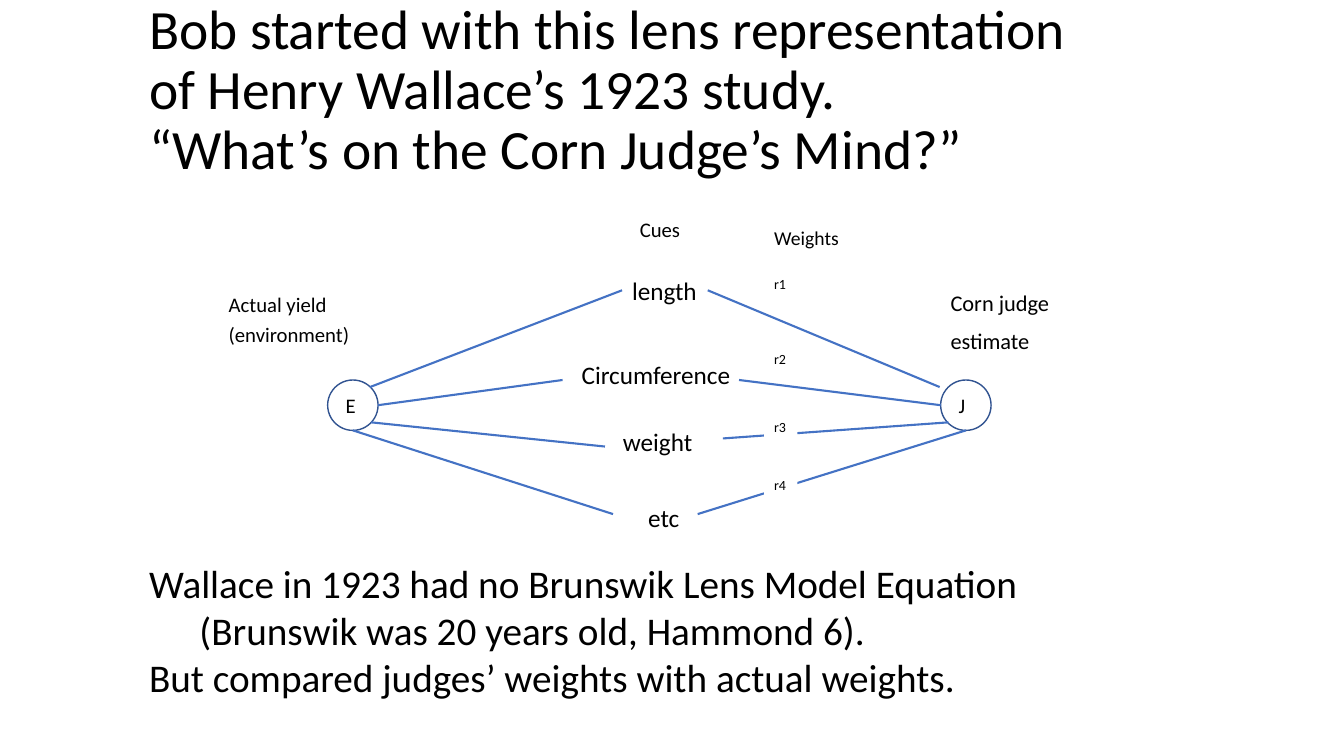
from pptx import Presentation, util as u
from pptx.dml.color import RGBColor
from pptx.enum import shapes, text
from pptx.oxml import parse_xml
from pptx.oxml.ns import nsdecls

W, H = 13.33, 7.5
INK, PAPER, BLUE, EDGE = "000000", "FFFFFF", "4472C4", "325491"
LEFT = 1.38

TITLE = ["Bob started with this lens representation of Henry Wallace’s 1923 study.\n"
         "“What’s on the Corn Judge’s Mind?”"]
NOTES = ["Wallace in 1923 had no Brunswik Lens Model Equation",
         "\t(Brunswik was 20 years old, Hammond 6).",
         "But compared judges’ weights with actual weights."]
ENDS = [("E", 3.25), ("J", 9.33)]
END_TOP, END_SIZE, PAD = 3.77, 0.5, 0.08
# cue, text box, line from E to cue, line from cue to J
CUES = [
    ("length", (6.17, 2.68, 0.85), (3.67, 3.84, 6.17, 2.88), (7.02, 2.88, 9.32, 3.84)),
    ("Circumference", (5.67, 3.52, 1.69), (3.75, 4.02, 5.58, 3.77), (7.33, 3.77, 9.33, 4.02)),
    ("weight", (6.08, 4.18, 0.9), (3.68, 4.19, 6, 4.43), (7.17, 4.35, 9.41, 4.19)),
    ("etc", (6.33, 4.93, 0.52), (3.5, 4.27, 6.08, 5.1), (6.92, 5.1, 9.58, 4.27)),
]
WEIGHT_X = 7.58
WEIGHTS = [("r1", 2.68), ("r2", 3.43), ("r3", 4.1), ("r4", 4.68)]

deck = Presentation()
deck.slide_width, deck.slide_height = u.Inches(W), u.Inches(H)
slide = deck.slides.add_slide(deck.slide_layouts[6])


def rgb(code):
    return RGBColor.from_string(code)


def inches(*nums):
    return [u.Inches(n) for n in nums]


def block(kind, box, line=None):
    """Add a white shape, outlined only when a line colour is given."""
    shape = slide.shapes.add_shape(kind, *inches(*box))
    shape.shadow.inherit = False
    shape.fill.solid()
    shape.fill.fore_color.rgb = rgb(PAPER)
    if line:
        shape.line.color.rgb = rgb(line)
        shape.line.width = u.Pt(1)
    else:
        shape.line.fill.background()
    return shape


def write(box, paras, size, fill=False, wrap=True, space=0, lead=None,
          align=text.PP_ALIGN.LEFT, anchor=text.MSO_ANCHOR.TOP):
    """Put paragraphs in a text box, or in a white rectangle if fill is set."""
    if fill:
        shape = block(shapes.MSO_SHAPE.RECTANGLE, box)
    else:
        shape = slide.shapes.add_textbox(*inches(*box))
    frame = shape.text_frame
    frame.word_wrap = wrap
    frame.vertical_anchor = anchor
    for i, words in enumerate(paras):
        para = frame.add_paragraph() if i else frame.paragraphs[0]
        para.text = words
        para.alignment = align
        para.space_before = u.Pt(space)
        if lead:
            para.line_spacing = lead
        for run in para.runs:
            run.font.name = "Calibri"
            run.font.size = u.Pt(size)
            run.font.color.rgb = rgb(INK)


def ray(ends):
    line = slide.shapes.add_connector(shapes.MSO_CONNECTOR.STRAIGHT, *inches(*ends))
    line.line.color.rgb = rgb(BLUE)
    line.line.width = u.Pt(1.5)
    line._element.spPr.append(parse_xml(f"<a:effectLst {nsdecls('a')}/>"))


write((LEFT, 0.17, 9.79, 1.48), TITLE, 39.6, lead=0.9, anchor=text.MSO_ANCHOR.MIDDLE)
write((9.33, 2.85, 1.5, 0.75), ["Corn judge", "estimate"], 16, fill=True, space=10, lead=0.9)
write((2.17, 2.85, 1.42, 0.75), ["Actual yield", "(environment)"], 14.8, fill=True, space=3)
write((6.17, 2.1, 0.75, 0.33), ["Cues"], 14.8, fill=True, align=text.PP_ALIGN.CENTER)
write((WEIGHT_X, 2.19, 1.03, 0.34), ["Weights"], 14)

for name, x in ENDS:
    block(shapes.MSO_SHAPE.OVAL, (x, END_TOP, END_SIZE, END_SIZE), EDGE)
for cue, box, *rays in CUES:
    for ends in rays:
        ray(ends)
    write((*box, 0.4), [cue], 18, wrap=False)
for name, x in ENDS:
    side = END_SIZE - 2 * PAD
    write((x + PAD, END_TOP + PAD, side, side), [name], 14.8, fill=True)
for name, y in WEIGHTS:
    write((WEIGHT_X, y, 0.33, 0.25), [name], 10, fill=True)

write((LEFT, 5.5, 10.98, 1.51), NOTES, 28)
deck.save("out.pptx")
